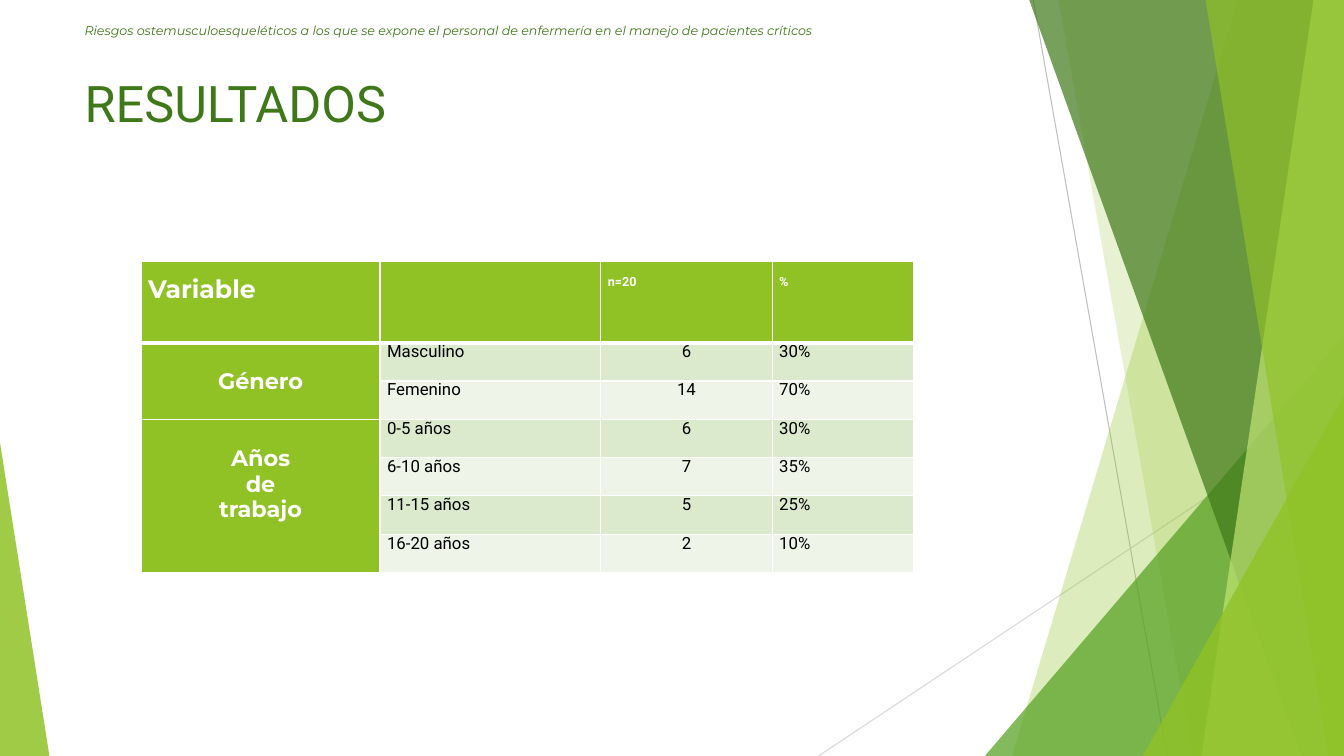
from dataclasses import dataclass
from typing import Any

from lxml.etree import SubElement
from pptx import Presentation
from pptx.dml.color import RGBColor
from pptx.enum.shapes import MSO_CONNECTOR, MSO_SHAPE
from pptx.enum.text import MSO_ANCHOR, MSO_AUTO_SIZE, PP_ALIGN
from pptx.oxml.ns import qn
from pptx.util import Emu, Inches, Pt

WIDTH, HEIGHT = Inches(13.33), Inches(7.5)
LIME, DARK, WHITE, BLACK = "90C226", "3F7819", "FFFFFF", "000000"
BANDS = ("DBE9CD", "EEF4E8")
HEADING, BODY = "Montserrat", "Roboto"


@dataclass(frozen=True)
class Ray:
    """A thin line between two points, in percent of the slide."""
    start: tuple[float, float]
    end: tuple[float, float]
    colour: str


@dataclass(frozen=True)
class Shard:
    """A full-height panel reaching the right edge, slanted on its left."""
    top: float
    bottom: float
    colour: str
    opacity: int


@dataclass(frozen=True)
class Wedge:
    """A right triangle standing on the bottom edge of the slide."""
    left: float
    top: float
    width: float
    apex: int
    colour: str
    opacity: int


@dataclass(frozen=True)
class CellStyle:
    """The look of one table cell."""
    font: str
    size: int
    colour: str
    bold: bool
    align: Any = PP_ALIGN.LEFT
    inset: float = 0


RAYS = (
    Ray((76.88, 0), (86.85, 100), "BFBFBF"),
    Ray((100, 53.73), (60.9, 100), "D9D9D9"),
)
PANELS = (
    Shard(92.1, 75.3, LIME, 30),
    Shard(78.75, 88.73, LIME, 20),
    Wedge(73.28, 44.4, 26.72, 1, "54A021", 72),
    Shard(76.58, 96.83, DARK, 70),
    Shard(97.73, 89.4, "C0E474", 70),
    Shard(89.7, 98.85, LIME, 65),
    Wedge(85.05, 52.4, 14.95, 1, LIME, 80),
    Wedge(0, 58.53, 3.68, 0, LIME, 85),
)
COLUMN_WIDTHS = (17.78, 16.43, 12.75, 10.5)
HEADER_HEIGHT, ROW_HEIGHT = 10.8, 5.07
HEADERS = ("Variable", "", "n=20", "%")
GROUPS = (
    ("Género", (("Masculino", "6", "30%"), ("Femenino", "14", "70%"))),
    ("Años\nde\ntrabajo", (
        ("0-5 años", "6", "30%"),
        ("6-10 años", "7", "35%"),
        ("11-15 años", "5", "25%"),
        ("16-20 años", "2", "10%"),
    )),
)
VARIABLE = CellStyle(HEADING, 18, WHITE, True, inset=1.93)
HEADER = CellStyle(BODY, 9, WHITE, True, inset=1.87)
GROUP = CellStyle(HEADING, 16, WHITE, True, PP_ALIGN.CENTER, 3.47)
LABEL = CellStyle(BODY, 12, BLACK, False)
COUNT = CellStyle(BODY, 12, BLACK, False, PP_ALIGN.CENTER)


def across(percent: float) -> Emu:
    """Turn a share of the slide's width into a length."""
    return Emu(round(WIDTH * percent / 100))


def down(percent: float) -> Emu:
    """Turn a share of the slide's height into a length."""
    return Emu(round(HEIGHT * percent / 100))


def rgb(colour: str) -> RGBColor:
    """Read a hex colour."""
    return RGBColor.from_string(colour)


def assign(target: Any, formats: dict[str, Any]) -> None:
    """Set every attribute named in formats on target."""
    for name, value in formats.items():
        setattr(target, name, value)


def style_font(font: Any, colour: str, formats: dict[str, Any]) -> None:
    """Colour and format a font."""
    font.color.rgb = rgb(colour)
    assign(font, formats)


def draw_ray(shapes: Any, ray: Ray) -> None:
    """Draw one thin line without a shadow."""
    line = shapes.add_connector(
        MSO_CONNECTOR.STRAIGHT, across(ray.start[0]), down(ray.start[1]),
        across(ray.end[0]), down(ray.end[1]))
    line.line.color.rgb = rgb(ray.colour)
    line.line.width = Pt(0.75)
    SubElement(line.element.spPr, qn("a:effectLst"))


def draw_panel(shapes: Any, panel: Shard | Wedge) -> None:
    """Draw one translucent panel of the decoration."""
    if isinstance(panel, Shard):
        outline = shapes.build_freeform(across(panel.top), 0)
        outline.add_line_segments(
            [(WIDTH, 0), (WIDTH, HEIGHT), (across(panel.bottom), HEIGHT)])
        shape = outline.convert_to_shape()
    else:
        shape = shapes.add_shape(
            MSO_SHAPE.ISOSCELES_TRIANGLE, across(panel.left), down(panel.top),
            across(panel.width), down(100 - panel.top))
        shape.adjustments[0] = panel.apex
    shape.shadow.inherit = False
    shape.line.fill.background()
    shape.fill.solid()
    shape.fill.fore_color.rgb = rgb(panel.colour)
    tint = shape.element.spPr.find(qn("a:solidFill"))[0]
    SubElement(tint, qn("a:alpha"), val=str(panel.opacity * 1000))


def draw_borders(cell: Any, widths: dict[str, int]) -> None:
    """Give the sides of a cell white lines of the given point widths."""
    properties = cell._tc.get_or_add_tcPr()
    for side, width in widths.items():
        edge = SubElement(properties, qn(f"a:ln{side}"), w=str(Pt(width)))
        SubElement(SubElement(edge, qn("a:solidFill")), qn("a:srgbClr"), val=WHITE)


def fill_cell(cell: Any, text: str, style: CellStyle) -> None:
    """Write styled text into a cell."""
    cell.text = text
    cell.margin_top = down(style.inset)
    for paragraph in cell.text_frame.paragraphs:
        assign(paragraph, {"alignment": style.align, "line_spacing": 0.95})
        style_font(paragraph.font, style.colour, {})
        for run in paragraph.runs:
            style_font(run.font, style.colour, {
                "name": style.font, "size": Pt(style.size), "bold": style.bold})


def draw_results(shapes: Any) -> None:
    """Draw the table of results."""
    row_count = 1 + sum(len(rows) for _, rows in GROUPS)
    table = shapes.add_table(
        row_count, len(HEADERS), across(10.5), down(34.53),
        across(sum(COLUMN_WIDTHS)),
        down(HEADER_HEIGHT + ROW_HEIGHT * (row_count - 1))).table
    assign(table, {"first_row": False, "horz_banding": False})
    for column, width in zip(table.columns, COLUMN_WIDTHS):
        column.width = across(width)
    for r, row in enumerate(table.rows):
        row.height = down(ROW_HEIGHT if r else HEADER_HEIGHT)
        for c, cell in enumerate(row.cells):
            assign(cell, {"margin_left": Inches(0.07), "margin_right": Inches(0.07),
                          "margin_top": 0, "margin_bottom": 0})
            draw_borders(cell, {"L": 1, "R": 1, "T": 3 if r == 1 else 1,
                                "B": 1 if r else 3})
            cell.fill.solid()
            cell.fill.fore_color.rgb = rgb(BANDS[(r - 1) % 2] if r and c else LIME)
    for c, header in enumerate(HEADERS):
        if header:
            fill_cell(table.cell(0, c), header, HEADER if c else VARIABLE)
    first = 1
    for group, rows in GROUPS:
        table.cell(first, 0).merge(table.cell(first + len(rows) - 1, 0))
        fill_cell(table.cell(first, 0), group, GROUP)
        for r, values in enumerate(rows, first):
            for c, (value, style) in enumerate(zip(values, (LABEL, COUNT, LABEL)), 1):
                fill_cell(table.cell(r, c), value, style)
        first += len(rows)


def write_title(shapes: Any) -> None:
    """Place the title in front of the decoration."""
    title = shapes.title
    assign(title, {"left": across(5.55), "top": down(8.93),
                   "width": across(70.5), "height": down(19.2)})
    shapes.element.append(title.element)
    frame = title.text_frame
    frame.text = "RESULTADOS"
    assign(frame, {"vertical_anchor": MSO_ANCHOR.TOP, "word_wrap": True,
                   "auto_size": MSO_AUTO_SIZE.NONE})
    frame.paragraphs[0].alignment = PP_ALIGN.LEFT
    style_font(frame.paragraphs[0].runs[0].font, DARK, {"name": BODY, "size": Pt(36)})


def write_topic(shapes: Any) -> None:
    """Write the topic of the study along the top."""
    frame = shapes.add_textbox(
        across(5.55), down(1.33), across(67.35), down(5.33)).text_frame
    assign(frame, {"word_wrap": True, "vertical_anchor": MSO_ANCHOR.MIDDLE})
    frame.text = ("Riesgos ostemusculoesqueléticos a los que se expone el personal "
                  "de enfermería en el manejo de pacientes críticos")
    style_font(frame.paragraphs[0].runs[0].font, DARK,
               {"name": HEADING, "size": Pt(9), "italic": True})


def main() -> None:
    """Build the slide and save it."""
    deck = Presentation()
    assign(deck, {"slide_width": WIDTH, "slide_height": HEIGHT})
    shapes = deck.slides.add_slide(deck.slide_layouts[5]).shapes
    for ray in RAYS:
        draw_ray(shapes, ray)
    for panel in PANELS:
        draw_panel(shapes, panel)
    write_title(shapes)
    draw_results(shapes)
    write_topic(shapes)
    deck.save("out.pptx")


if __name__ == "__main__":
    main()
